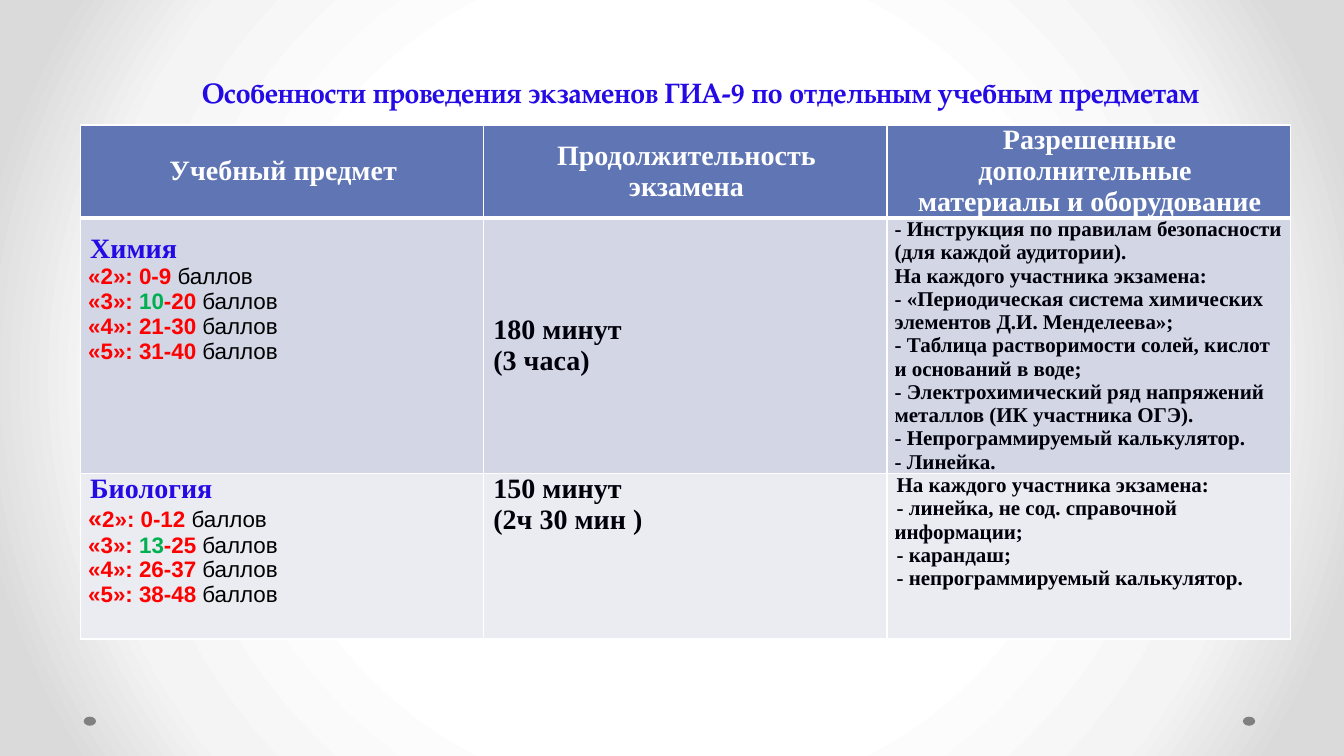
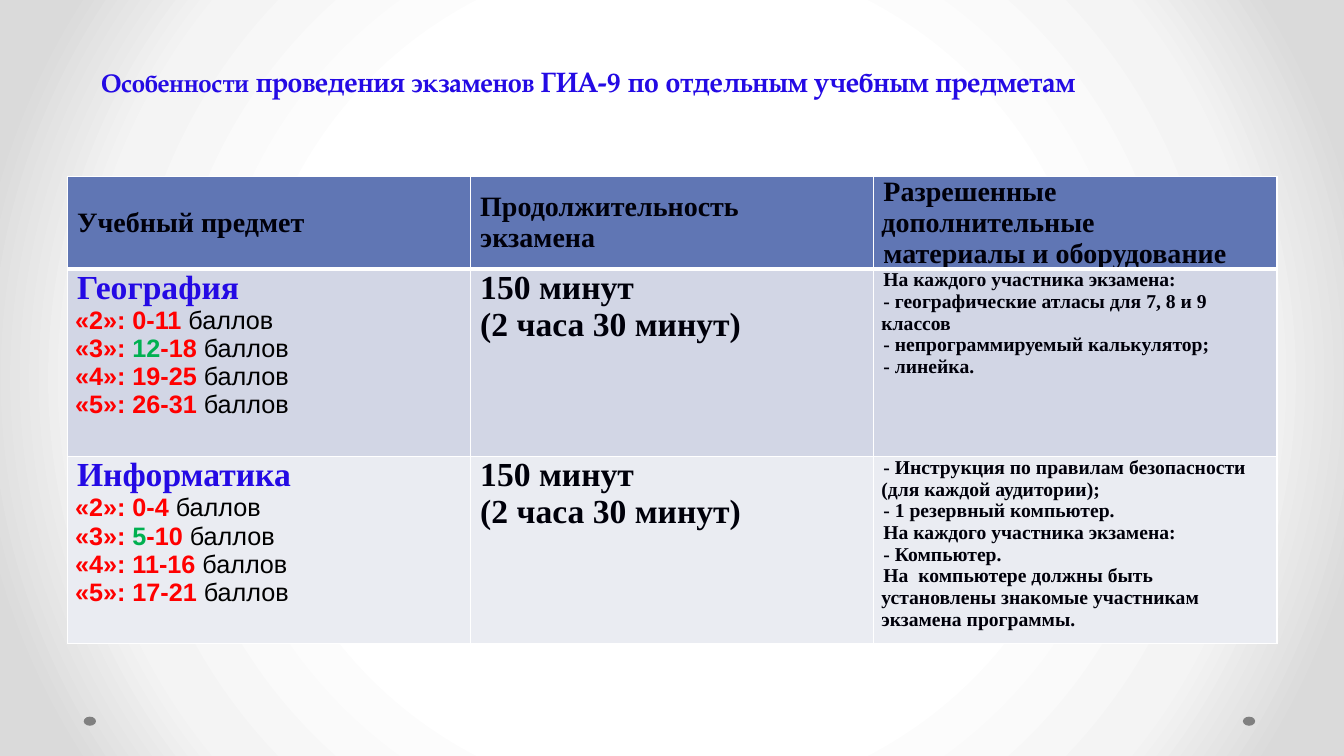
from dataclasses import dataclass

from pptx import Presentation
from pptx import util as u
from pptx.dml import color
from pptx.enum import shapes, text
from pptx.oxml import parse_xml
from pptx.oxml.ns import nsdecls, qn

Pt = u.Pt


@dataclass(frozen=True)
class Theme:
    title_face: str = "TeX Gyre Pagella"
    table_face: str = "Times New Roman"
    score_face: str = "Arial"
    accent: str = "240AE4"
    ink: str = "00000A"
    black: str = "000000"
    white: str = "FFFFFF"
    red: str = "FF0000"
    green: str = "00B050"
    dot: str = "808080"
    row_fills: tuple = ("6076B4", "D2D6E5", "EAECF2")
    backdrop: tuple = ((50, "FFFFFF"), (76, "F4F4F4"), (92, "DADADA"))
    title_size: int = 20
    header_size: int = 20
    title_pitch: int = 58
    # Line pitch of table text, by type size
    pitch = {14: 15.5, 15: 16.6, 20: 22.1, 24: 26.5}.get


theme = Theme()
rgb = color.RGBColor.from_string


def write(frame, words, size, face=theme.table_face, ink=theme.ink, bold=True,
          align=None, indent=0, pitch=None, same_line=False):
    """Add words as a new paragraph, or at the end of the last one."""
    para = frame.paragraphs[-1]
    if para.runs and not same_line:
        para = frame.add_paragraph()
    if not same_line:
        para.alignment = align
        para.line_spacing = Pt(pitch) if pitch else None
        para._p.get_or_add_pPr().set("indent", str(Pt(indent)))
    span = para.add_run()
    span.text = words
    span.font.size, span.font.name, span.font.bold = Pt(size), face, bold
    span.font.color.rgb = rgb(ink)


def style_cell(cell, row):
    cell.fill.solid()
    cell.fill.fore_color.rgb = rgb(theme.row_fills[row])
    cell.margin_left = cell.margin_right = Pt(5.4)
    cell.margin_top = cell.margin_bottom = 0
    widths = {"L": 1, "R": 1, "T": 3 if row == 1 else 1, "B": 3 if row == 0 else 1}
    for place, (side, width) in enumerate(widths.items()):
        cell._tc.get_or_add_tcPr().insert(place, parse_xml(
            f'<a:ln{side} {nsdecls("a")} w="{Pt(width)}"><a:solidFill>'
            f'<a:srgbClr val="{theme.white}"/></a:solidFill></a:ln{side}>'))


HEADINGS = [
    ["Учебный предмет"],
    ["Продолжительность", "экзамена"],
    ["Разрешенные дополнительные ", "материалы и оборудование"],
]
COLUMN_WIDTH = 288
INDENT = 1.44
MIDDLE, TOP = text.MSO_ANCHOR.MIDDLE, text.MSO_ANCHOR.TOP

# Each limit is the highest score for marks 2, 3, 4 and 5.
SLIDES = [
    dict(
        title=[("Особенности проведения экзаменов ГИА-9 по отдельным учебным предметам",
                theme.title_size)],
        title_box=(88.5, 22.3, 823.7, 59),
        table_at=(57.6, 89.3), heights=(66.3, 182.6, 118),
        header_ink=theme.white, header_align=text.PP_ALIGN.CENTER,
        name_size=20, score_size=16, item_size=15,
        subjects=[
            dict(name="Химия", limits=(9, 20, 30, 40), top_gap=11,
                 duration=["180 минут", "(3 часа)"], anchor=MIDDLE, item_indent=0,
                 items=["- Инструкция по правилам безопасности (для каждой аудитории). ",
                        "На каждого участника экзамена:",
                        "- «Периодическая система химических элементов Д.И. Менделеева»;",
                        "- Таблица растворимости солей, кислот и оснований в воде;",
                        "- Электрохимический ряд напряжений металлов (ИК участника ОГЭ).",
                        "- Непрограммируемый калькулятор.",
                        "- Линейка."]),
            dict(name="Биология", limits=(12, 25, 37, 48), first_quote=18,
                 duration=["150 минут", "(2ч 30 мин )"],
                 items=["На каждого участника экзамена:",
                        "- линейка, не сод. справочной информации;",
                        "- карандаш;",
                        "- непрограммируемый калькулятор."]),
        ],
    ),
    dict(
        title=[("Особенности", 18), (" проведения ", theme.title_size), ("экзаменов", 19),
               (" ГИА-9 по отдельным учебным предметам", theme.title_size)],
        title_box=(20.9, 28.8, 798.5, 44.6),
        table_at=(48.2, 126), heights=(66.3, 134, 133.5),
        header_ink=theme.ink, header_align=None,
        name_size=24, score_size=18, item_size=14,
        subjects=[
            dict(name="География", limits=(11, 18, 25, 31),
                 duration=["150 минут", "(2 часа 30 минут)"],
                 items=["На каждого участника экзамена:",
                        "- географические атласы для 7, 8 и 9 классов",
                        "- непрограммируемый калькулятор;",
                        "- линейка."]),
            dict(name="Информатика", limits=(4, 10, 16, 21),
                 duration=["150 минут", "(2 часа 30 минут)"],
                 items=["- Инструкция по правилам безопасности (для каждой аудитории);",
                        "- 1 резервный компьютер.",
                        "На каждого участника экзамена:",
                        "- Компьютер.",
                        "На  компьютере должны быть установлены знакомые участникам "
                        "экзамена программы."]),
        ],
    ),
]

deck = Presentation()
deck.slide_width, deck.slide_height = Pt(960), Pt(540)

# Radial backdrop shared through the master
master = deck.slide_master
master.background.fill.gradient()
gradient = next(master._element.iter(qn("a:gradFill")))
stops = "".join(f'<a:gs pos="{pos * 1000}"><a:srgbClr val="{tint}"/></a:gs>'
                for pos, tint in theme.backdrop)
gradient.getparent().replace(gradient, parse_xml(
    f'<a:gradFill {nsdecls("a")} rotWithShape="1"><a:gsLst>{stops}</a:gsLst>'
    '<a:path path="circle"><a:fillToRect l="50000" t="50000" r="50000" b="50000"/>'
    '</a:path></a:gradFill>'))

for content in SLIDES:
    page = deck.slides.add_slide(deck.slide_layouts[6])

    for left in (887.8, 59.8):
        dot = page.shapes.add_shape(shapes.MSO_SHAPE.OVAL, Pt(left), Pt(511.9),
                                    Pt(8.8), Pt(6.5))
        dot.shadow.inherit = False
        dot.fill.solid()
        dot.fill.fore_color.rgb = rgb(theme.dot)
        dot.line.fill.background()

    box = page.shapes.add_textbox(*map(Pt, content["title_box"]))
    box.text_frame.word_wrap = True
    box.text_frame.vertical_anchor = text.MSO_ANCHOR.BOTTOM
    for position, (words, size) in enumerate(content["title"]):
        write(box.text_frame, words, size, face=theme.title_face, ink=theme.accent,
              align=text.PP_ALIGN.CENTER, pitch=theme.title_pitch,
              same_line=position > 0)

    heights = content["heights"]
    table = page.shapes.add_table(
        len(heights), len(HEADINGS), *map(Pt, content["table_at"]),
        Pt(COLUMN_WIDTH * len(HEADINGS)), Pt(sum(heights))).table
    for column in table.columns:
        column.width = Pt(COLUMN_WIDTH)
    for row, height in enumerate(heights):
        table.rows[row].height = Pt(height)
        for cell in table.rows[row].cells:
            style_cell(cell, row)

    for cell, lines in zip(table.rows[0].cells, HEADINGS):
        cell.vertical_anchor = MIDDLE
        for line in lines:
            write(cell.text_frame, line, theme.header_size, ink=content["header_ink"],
                  align=content["header_align"], indent=INDENT,
                  pitch=theme.pitch(theme.header_size))

    name_size, item_size = content["name_size"], content["item_size"]
    for row, subject in enumerate(content["subjects"], start=1):
        scores, duration, items = table.rows[row].cells
        scores.vertical_anchor = TOP
        scores.margin_top = Pt(subject.get("top_gap", 0))
        duration.vertical_anchor = items.vertical_anchor = subject.get("anchor", TOP)

        write(scores.text_frame, subject["name"], name_size, ink=theme.accent,
              indent=INDENT, pitch=theme.pitch(name_size))
        size, low = content["score_size"], 0
        for mark, high in enumerate(subject["limits"], start=2):
            quote_size = subject.get("first_quote", size) if mark == 2 else size
            write(scores.text_frame, "«", quote_size, face=theme.score_face, ink=theme.red)
            for words, ink, bold in (
                (f"{mark}»: ", theme.red, True),
                (f"{low}", theme.green if mark == 3 else theme.red, True),
                (f"-{high}", theme.red, True),
                (" баллов", theme.black, False),
            ):
                write(scores.text_frame, words, size, face=theme.score_face, ink=ink,
                      bold=bold, same_line=True)
            low = high + 1

        for line in subject["duration"]:
            write(duration.text_frame, line, name_size, indent=INDENT,
                  pitch=theme.pitch(name_size))
        for line in subject["items"]:
            write(items.text_frame, line, item_size, pitch=theme.pitch(item_size),
                  indent=subject.get("item_indent", INDENT))

deck.save("out.pptx")
